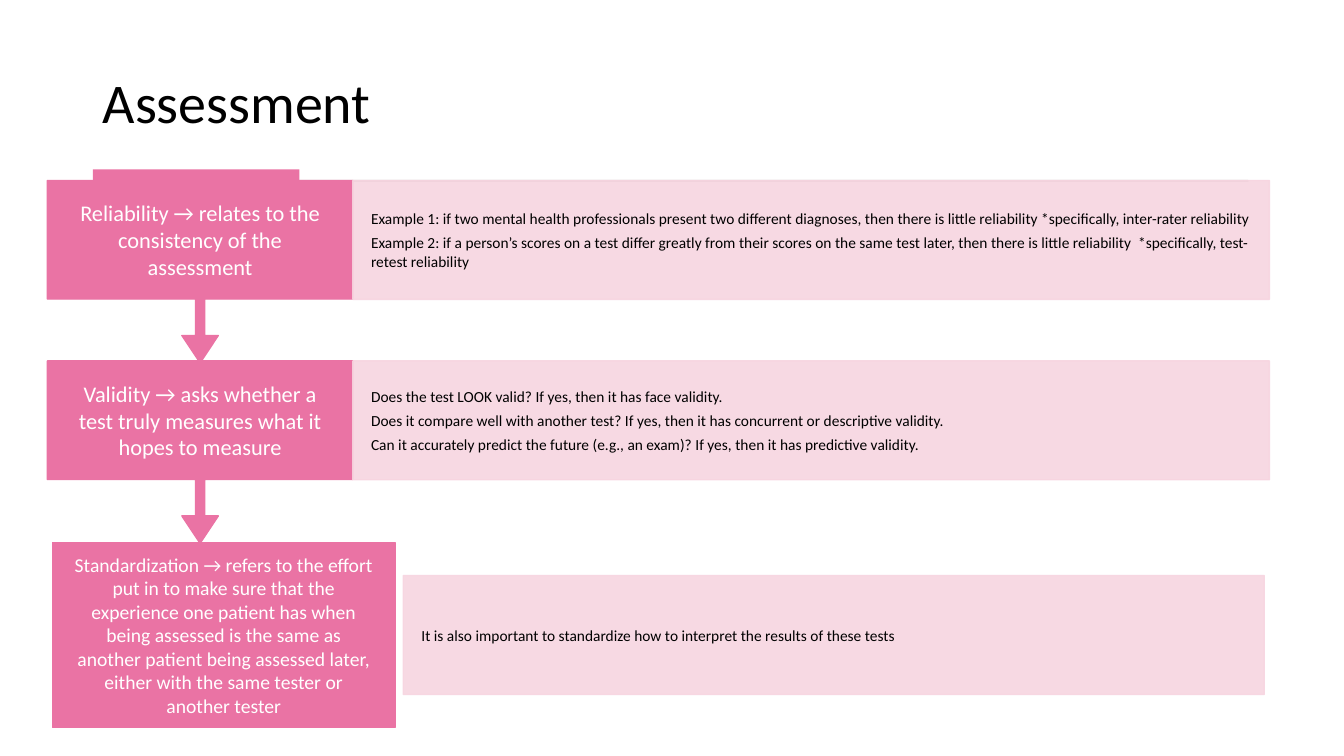
from dataclasses import dataclass

from lxml.etree import SubElement
from pptx import Presentation
from pptx.dml.color import RGBColor
from pptx.enum.shapes import MSO_SHAPE as Shape
from pptx.enum.text import MSO_ANCHOR as Anchor, PP_ALIGN as Align
from pptx.oxml.ns import qn
from pptx.util import Inches, Pt


@dataclass(frozen=True)
class Theme:
    font: str = "Calibri"
    pink: str = "EA73A4"
    pale: str = "F7D5E0"
    rule: str = "595959"
    white: str = "FFFFFF"
    black: str = "000000"
    title_size: int = 40
    step_size: int = 16
    long_step_size: int = 14
    detail_size: int = 11
    space_after: float = 0.35


theme = Theme()


def add_block(kind, box, color, opacity=100, line_width=1):
    shape = slide.shapes.add_shape(kind, *map(Inches, box))
    shape.shadow.inherit = False
    shape.line.width = Pt(line_width)
    for fill in (shape.fill, shape.line.fill):
        fill.solid()
        fill.fore_color.rgb = RGBColor.from_string(color)
    if opacity < 100:
        for element in shape.element.spPr.iter(qn("a:srgbClr")):
            SubElement(element, qn("a:alpha")).set("val", str(opacity * 1000))
    return shape


def write_text(shape, lines, size, color, align, insets, anchor=Anchor.MIDDLE):
    frame = shape.text_frame
    frame.word_wrap = True
    frame.vertical_anchor = anchor
    frame.margin_left = frame.margin_right = Inches(insets[0])
    frame.margin_top = frame.margin_bottom = Inches(insets[1])
    for index, line in enumerate(lines):
        paragraph = frame.add_paragraph() if index else frame.paragraphs[0]
        paragraph.alignment = align
        paragraph.space_after = Pt(round(size * theme.space_after, 1))
        run = paragraph.add_run()
        run.text = line
        run.font.name = theme.font
        run.font.size = Pt(size)
        run.font.color.rgb = RGBColor.from_string(color)


presentation = Presentation()
presentation.slide_width = Inches(13.33)
presentation.slide_height = Inches(7.5)
slide = presentation.slides.add_slide(presentation.slide_layouts[6])

title = slide.shapes.add_textbox(Inches(0.92), Inches(0.28), Inches(11.49), Inches(1.11))
write_text(title, ["Assessment"], theme.title_size, theme.black, Align.LEFT, (0.1, 0.05), Anchor.BOTTOM)
title.text_frame.paragraphs[0].line_spacing = 0.9
title.text_frame.paragraphs[0].space_after = Pt(0)

add_block(Shape.RECTANGLE, (0.95, 1.79, 11.43, 0.01), theme.rule, 30, 0.75)
accent = add_block(Shape.RECTANGLE, (0.92, 1.68, 2.05, 0.12), theme.pink)
accent.line.fill.background()

first_top, step_pitch = 1.79, 1.79
step_left, step_width, step_height = 0.47, 3.03, 1.81
detail_width, detail_height = 9.09, 1.18

last_step = add_block(Shape.RECTANGLE, (0.52, 5.38, 3.4, 1.84), theme.pink)
write_text(
    last_step,
    ["Standardization → refers to the effort put in to make sure that the experience one patient has "
     "when being assessed is the same as another patient being assessed later, either with the same "
     "tester or another tester"],
    theme.long_step_size, theme.white, Align.CENTER, (0.22, 0.11),
)
last_detail = add_block(Shape.RECTANGLE, (4, 5.71, 8.54, detail_height), theme.pale, 90)
write_text(
    last_detail,
    ["It is also important to standardize how to interpret the results of these tests"],
    theme.detail_size, theme.black, Align.LEFT, (0.18, 0.15),
)

steps = [
    ("Reliability → relates to the consistency of the assessment", [
        "Example 1: if two mental health professionals present two different diagnoses, then there is "
        "little reliability *specifically, inter-rater reliability",
        "Example 2: if a person’s scores on a test differ greatly from their scores on the same test "
        "later, then there is little reliability  *specifically, test-retest reliability",
    ]),
    ("Validity → asks whether a test truly measures what it hopes to measure", [
        "Does the test LOOK valid? If yes, then it has face validity.",
        "Does it compare well with another test? If yes, then it has concurrent or descriptive validity.",
        "Can it accurately predict the future (e.g., an exam)? If yes, then it has predictive validity.",
    ]),
]
for index, (heading, details) in reversed(list(enumerate(steps))):
    top = first_top + index * step_pitch
    step = add_block(Shape.DOWN_ARROW_CALLOUT, (step_left, top, step_width, step_height), theme.pink)
    for position, value in enumerate((0.05, 0.1, 0.15, 0.65)):
        step.adjustments[position] = value
    write_text(step, [heading], theme.step_size, theme.white, Align.CENTER, (0.22, 0.12))
    detail = add_block(
        Shape.RECTANGLE, (step_left + step_width, top, detail_width, detail_height), theme.pale, 90
    )
    write_text(detail, details, theme.detail_size, theme.black, Align.LEFT, (0.18, 0.15))

presentation.save("out.pptx")
